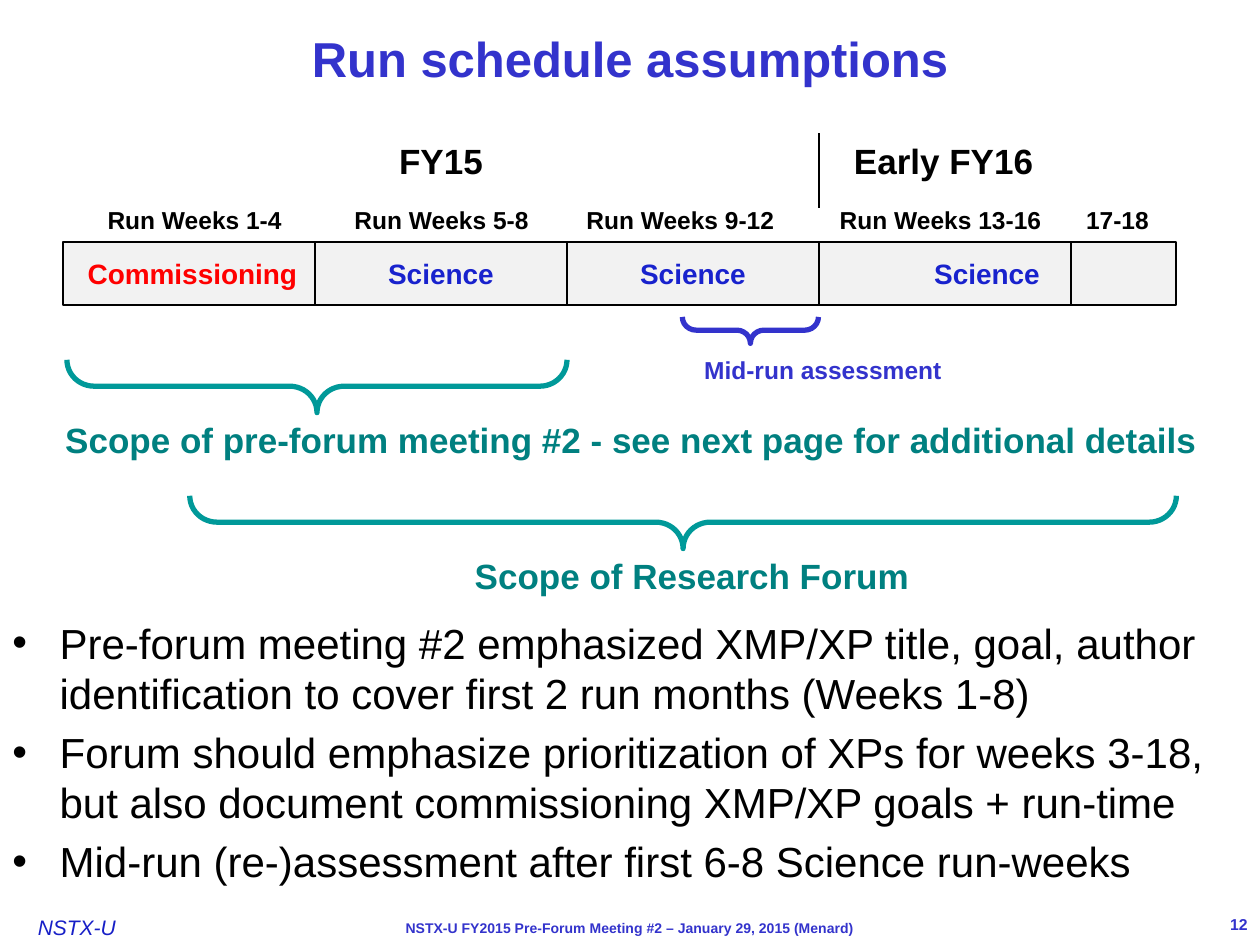
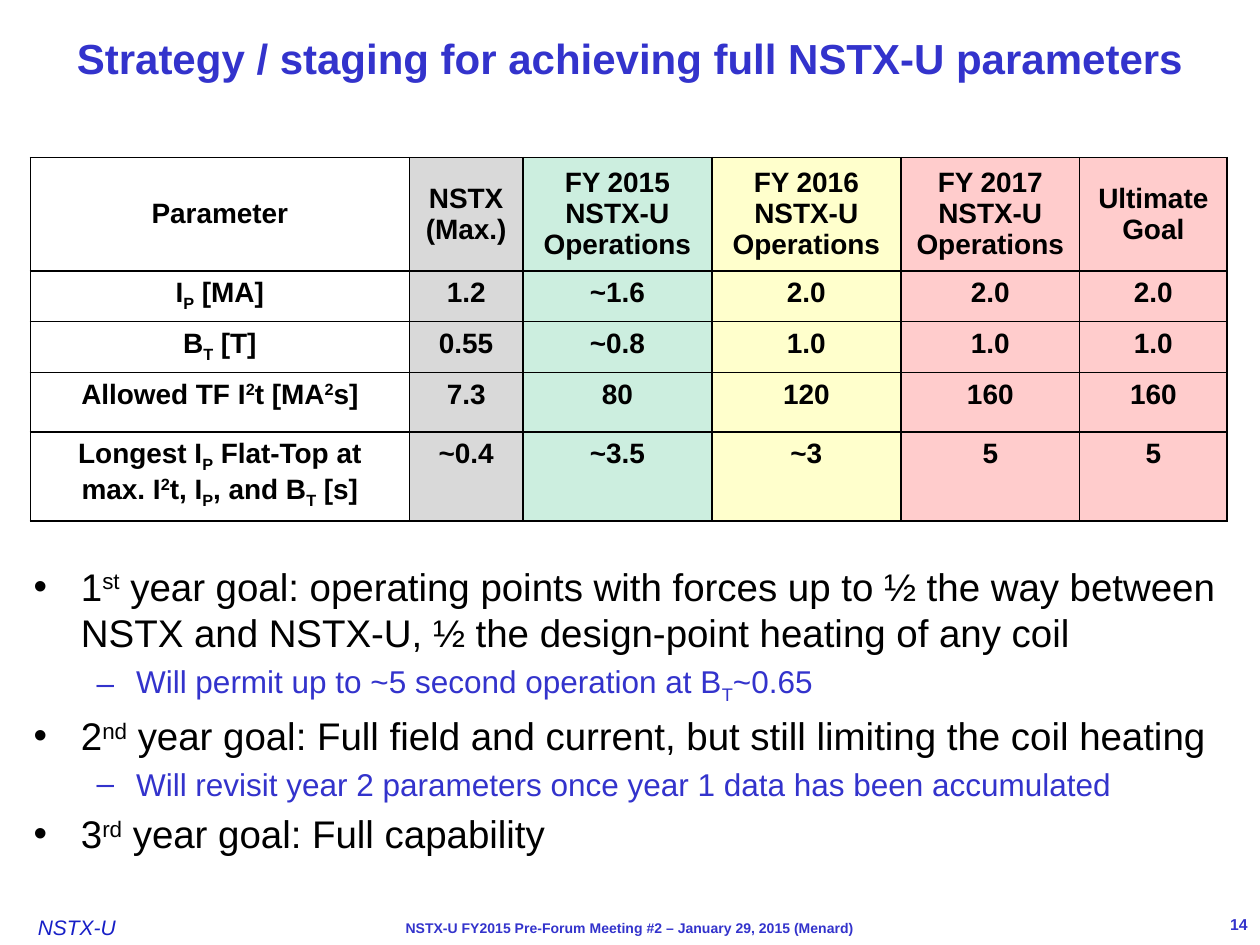
import lxml.etree
import pptx
import pptx.dml.color
import pptx.enum.shapes
import pptx.enum.text
import pptx.oxml.ns
import pptx.util

Pt = pptx.util.Pt
Align = pptx.enum.text.PP_ALIGN
Anchor = pptx.enum.text.MSO_ANCHOR
Shape = pptx.enum.shapes.MSO_SHAPE
qn = pptx.oxml.ns.qn

BLUE, SCIENCE, TEAL, BLACK = "3333CC", "1822CD", "008080", "000000"
BRACE_TEAL = "009999"
BASELINES = {"^": "30000", "_": "-25000"}
BULLETS = [("•", 27, 27), ("–", 58.5, 22.5)]
PADDING = (7.2, 3.6, 7.2, 3.6)


def rgb(value):
    return pptx.dml.color.RGBColor.from_string(value)


def apply(target, values):
    for name, value in values.items():
        setattr(target, name, value)


def set_frame(frame, anchor=Anchor.TOP, wrap=True, padding=PADDING):
    left, top, right, bottom = map(Pt, padding)
    apply(frame, dict(word_wrap=wrap, vertical_anchor=anchor,
                      margin_left=left, margin_top=top,
                      margin_right=right, margin_bottom=bottom))


def write(paragraph, text, size, color=BLACK, align=Align.LEFT, bold=False, italic=False):
    paragraph.alignment = align
    for piece in text.split("|"):
        run = paragraph.add_run()
        run.text = piece.lstrip("^_")
        apply(run.font, dict(name="Arial", size=Pt(size), bold=bold, italic=italic))
        run.font.color.rgb = rgb(color)
        if piece[0] in BASELINES:
            run._r.get_or_add_rPr().set("baseline", BASELINES[piece[0]])


def add_text(slide, box, text, size, color=BLACK, align=Align.LEFT,
             bold=True, italic=False, **frame_format):
    frame = slide.shapes.add_textbox(*map(Pt, box)).text_frame
    set_frame(frame, **frame_format)
    write(frame.paragraphs[0], text, size, color, align, bold, italic)


def add_page(deck, title, title_size, number):
    slide = deck.slides.add_slide(deck.slide_layouts[6])
    add_text(slide, (21.6, 522.7, 62.6, 14.4), "NSTX-U", 12, "171FC7",
             bold=False, italic=True, padding=(0, 0, 0, 0))
    add_text(slide, (144, 522, 432, 17.3),
             "NSTX-U FY2015 Pre-Forum Meeting #2 – January 29, 2015 (Menard)",
             8, BLUE, Align.CENTER)
    add_text(slide, (660, 522, 60, 12.2), str(number), 9, BLUE, Align.RIGHT,
             anchor=Anchor.MIDDLE)
    add_text(slide, (0, 0, 720, 66.2), title, title_size, BLUE, Align.CENTER,
             anchor=Anchor.MIDDLE)
    return slide


def add_bullets(slide, box, items, sizes, colors):
    frame = slide.shapes.add_textbox(*map(Pt, box)).text_frame
    set_frame(frame)
    for index, (level, text) in enumerate(items):
        paragraph = frame.add_paragraph() if index else frame.paragraphs[0]
        mark, margin, hanging = BULLETS[level]
        properties = paragraph._p.get_or_add_pPr()
        properties.set("marL", str(Pt(margin)))
        properties.set("indent", str(-Pt(hanging)))
        lxml.etree.SubElement(properties, qn("a:buFont")).set("typeface", "Arial")
        lxml.etree.SubElement(properties, qn("a:buChar")).set("char", mark)
        paragraph.level = level
        if index:
            paragraph.space_before = Pt(0.2 * sizes[level])
        write(paragraph, text, sizes[level], colors[level])


def add_brace(slide, box, color):
    left, top, width, height = box
    brace = slide.shapes.add_shape(
        Shape.RIGHT_BRACE, Pt(left + (width - height) / 2),
        Pt(top + (height - width) / 2), Pt(height), Pt(width))
    brace.rotation = 90
    brace.adjustments[0] = 0.515
    brace.shadow.inherit = False
    brace.fill.background()
    brace.line.color.rgb = rgb(color)
    brace.line.width = Pt(3)


def add_timeline(slide, box):
    left, top, width, height = box
    period = 144
    periods = [
        ("Run Weeks 1-4", 18, 114.5, "Commissioning", "FF0000", 4),
        ("Run Weeks 5-8", 159.1, 114.5, "Science", SCIENCE, 0),
        ("Run Weeks 9-12", 291.6, 122.4, "Science", SCIENCE, 0),
        ("Run Weeks 13-16", 436.3, 130.3, "Science", SCIENCE, 48),
        ("17-18", 577.4, 50.4, "", SCIENCE, 0),
    ]
    for index, (weeks, offset, label_width, phase, color, inset) in enumerate(periods):
        start = index * period
        block = slide.shapes.add_shape(
            Shape.RECTANGLE, Pt(left + start), Pt(top),
            Pt(min(period, width - start)), Pt(height))
        block.shadow.inherit = False
        block.fill.solid()
        block.fill.fore_color.rgb = rgb("F2F2F2")
        block.line.color.rgb = rgb(BLACK)
        block.line.width = Pt(1.25)
        if phase:
            set_frame(block.text_frame, Anchor.MIDDLE, padding=(inset, 0, 0, 0))
            write(block.text_frame.paragraphs[0], phase, 16, color, Align.CENTER, True)
        add_text(slide, (left + offset, top - 24.5, label_width, 24.5), weeks, 14,
                 align=Align.CENTER, wrap=False)

    for year, offset, label_width in [("FY15", 184.3, 63.4), ("Early FY16", 444.2, 118.1)]:
        add_text(slide, (left + offset, top - 61.9, label_width, 31.7), year, 20,
                 align=Align.CENTER, wrap=False)
    year_end = Pt(left + 3 * period)
    divider = slide.shapes.add_connector(
        pptx.enum.shapes.MSO_CONNECTOR.STRAIGHT,
        year_end, Pt(top - 19.4), year_end, Pt(top - 61.9))
    divider.line.color.rgb = rgb(BLACK)
    divider.line.width = Pt(1.5)
    lxml.etree.SubElement(divider._element.spPr, qn("a:effectLst"))


def add_scopes(slide, box):
    left, top = box[:2]
    scopes = [
        ((353.9, 0, 77.8, 15.1), BLUE, (359.3, 18.3, 150.5, 24.5),
         "Mid-run assessment", 14, BLUE),
        ((2.2, 24.5, 285.8, 30.2), BRACE_TEAL, (-5.8, 54.3, 666, 31.7),
         "Scope of pre-forum meeting #2 - see next page for additional details", 20, TEAL),
        ((72.4, 102.2, 563.8, 30.2), BRACE_TEAL, (228.2, 132.1, 265, 31.7),
         "Scope of Research Forum", 20, TEAL),
    ]
    for brace, brace_color, label, text, size, color in scopes:
        add_brace(slide, (left + brace[0], top + brace[1], *brace[2:]), brace_color)
        add_text(slide, (left + label[0], top + label[1], *label[2:]),
                 text, size, color, wrap=False)


def add_borders(cell):
    properties = cell._tc.get_or_add_tcPr()
    for side in ("lnL", "lnR", "lnT", "lnB"):
        border = lxml.etree.SubElement(properties, qn("a:" + side), w=str(Pt(1)))
        fill = lxml.etree.SubElement(border, qn("a:solidFill"))
        lxml.etree.SubElement(fill, qn("a:srgbClr"), val=BLACK)


def add_parameters(slide, box):
    columns = [
        (216.7, None), (64.8, "D9D9D9"), (108, "CCEEDF"),
        (108, "FFFFCC"), (102.2, "FFCCCC"), (84.2, "FFCCCC"),
    ]
    heights = [64.8, 27.4, 27.4, 34, 47.5]
    rows = [
        ("Parameter", "NSTX\n(Max.)", "FY 2015 NSTX-U\nOperations",
         "FY 2016\nNSTX-U\nOperations", "FY 2017\nNSTX-U Operations", "Ultimate Goal"),
        ("I|_P| [MA]", "1.2", "~1.6", "2.0", "2.0", "2.0"),
        ("B|_T| [T]", "0.55", "~0.8", "1.0", "1.0", "1.0"),
        ("Allowed TF I|^2|t [MA|^2|s]", "7.3", "80", "120", "160", "160"),
        ("Longest I|_P| Flat-Top at max. I|^2|t, I|_P|, and B|_T| [s]",
         "~0.4", "~3.5", "~3", "5", "5"),
    ]
    table = slide.shapes.add_table(len(rows), len(columns), *map(Pt, box)).table
    apply(table, dict(first_row=False, horz_banding=False))
    for column, (width, _) in zip(table.columns, columns):
        column.width = Pt(width)
    for row_index, (height, values) in enumerate(zip(heights, rows)):
        table.rows[row_index].height = Pt(height)
        for column_index, (value, (_, color)) in enumerate(zip(values, columns)):
            cell = table.cell(row_index, column_index)
            cell.vertical_anchor = Anchor.TOP if row_index else Anchor.MIDDLE
            add_borders(cell)
            if color:
                cell.fill.solid()
                cell.fill.fore_color.rgb = rgb(color)
            else:
                cell.fill.background()
            for index, line in enumerate(value.split("\n")):
                frame = cell.text_frame
                paragraph = frame.add_paragraph() if index else frame.paragraphs[0]
                write(paragraph, line, 16, align=Align.CENTER, bold=True)


def build_schedule(deck):
    slide = add_page(deck, "Run schedule assumptions", 28, 12)
    add_timeline(slide, (36, 138.2, 636, 36))
    add_scopes(slide, (36, 181.1, 660, 164))
    add_bullets(slide, (0, 349.2, 720, 162), [
        (0, "Pre-forum meeting #2 emphasized XMP/XP title, goal, author "
            "identification to cover first 2 run months (Weeks 1-8)"),
        (0, "Forum should emphasize prioritization of XPs for weeks 3-18, "
            "but also document commissioning XMP/XP goals + run-time"),
        (0, "Mid-run (re-)assessment after first 6-8 Science run-weeks"),
    ], (24,), (BLACK,))


def build_strategy(deck):
    slide = add_page(deck, "Strategy / staging for achieving full NSTX-U parameters", 24, 14)
    add_parameters(slide, (17.3, 90, 684, 201))
    add_bullets(slide, (12.2, 318.2, 696.2, 177.8), [
        (0, "1|^st| year goal: operating points with forces up to ½ the way between "
            "NSTX and NSTX-U, ½ the design-point heating of any coil"),
        (1, "Will permit up to ~5 second operation at B|_T|~0.65"),
        (0, "2|^nd| year goal: Full field and current, but still limiting the coil heating"),
        (1, "Will revisit year 2 parameters once year 1 data has been accumulated"),
        (0, "3|^rd| year goal: Full capability"),
    ], (22, 18), (BLACK, BLUE))


def main():
    deck = pptx.Presentation()
    apply(deck, dict(slide_width=Pt(720), slide_height=Pt(540)))
    build_schedule(deck)
    build_strategy(deck)
    deck.save("out.pptx")


if __name__ == "__main__":
    main()
